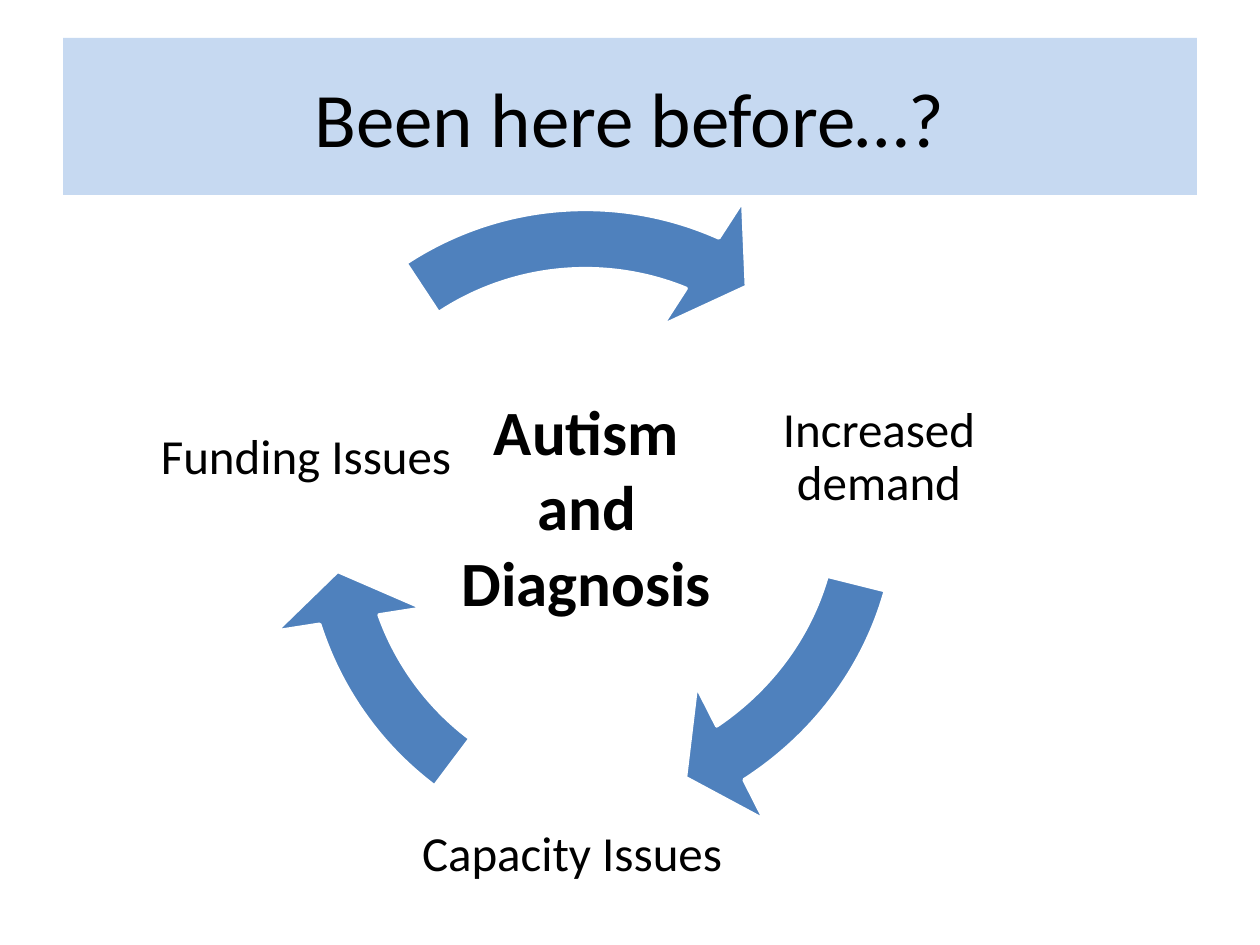
from pptx import Presentation
from pptx.dml.color import RGBColor
from pptx.enum.shapes import MSO_SHAPE
from pptx.enum.text import MSO_ANCHOR, MSO_AUTO_SIZE, PP_ALIGN
from pptx.util import Inches, Pt

BLACK = RGBColor(0x00, 0x00, 0x00)
WHITE = RGBColor(0xFF, 0xFF, 0xFF)
BANNER_BLUE = RGBColor(0xC6, 0xD9, 0xF1)
ARROW_BLUE = RGBColor(0x4F, 0x81, 0xBD)

PX_PER_INCH = 126
LABEL_SIDE = 314
LABEL_INSET = 5
ARROW_THICKNESS, ARROW_TIP, ARROW_HEAD = 0.08, 5.77, 0.1

STEPS = [
    ("Increased demand", (722, 301), (154, 131, 788, 751), (32.09, 8.41)),
    ("Capacity Issues", (415, 699), (260, 155, 741, 741), (96.89, 76.17)),
    ("Funding Issues", (149, 302), (215, 165, 741, 741), (175.96, 141.96)),
]


def px(length):
    return int(length * Inches(1) / PX_PER_INCH)


def assign(target, values):
    for attribute, value in values.items():
        setattr(target, attribute, value)


class CycleSlide:
    font = "Calibri"

    def __init__(self, presentation):
        self.slide = presentation.slides.add_slide(presentation.slide_layouts[5])
        self.cycle = self.slide.shapes.add_group_shape()

    def set_text(self, frame, text, size, bold=False, spacing=None, **frame_format):
        assign(frame, {"word_wrap": True, **frame_format})
        paragraph = frame.paragraphs[0]
        assign(paragraph, {"alignment": PP_ALIGN.CENTER, "line_spacing": spacing})
        run = paragraph.add_run()
        run.text = text
        assign(run.font, {"name": self.font, "size": Pt(size), "bold": bold})
        run.font.color.rgb = BLACK

    def title(self, text, left, top, width, height):
        banner = self.slide.shapes.title
        assign(banner, {"left": px(left), "top": px(top),
                        "width": px(width), "height": px(height)})
        banner.fill.solid()
        banner.fill.fore_color.rgb = BANNER_BLUE
        self.set_text(banner.text_frame, text, 44, vertical_anchor=MSO_ANCHOR.MIDDLE)

    def label(self, text, left, top):
        issue_label = self.cycle.shapes.add_textbox(
            px(left), px(top), px(LABEL_SIDE), px(LABEL_SIDE))
        insets = {f"margin_{side}": px(LABEL_INSET)
                  for side in ("left", "top", "right", "bottom")}
        self.set_text(issue_label.text_frame, text, 28, spacing=0.9,
                      vertical_anchor=MSO_ANCHOR.MIDDLE, **insets)

    def arrow(self, bounds, end_angle, start_angle):
        cycle_arrow = self.cycle.shapes.add_shape(
            MSO_SHAPE.CIRCULAR_ARROW, *map(px, bounds))
        values = (ARROW_THICKNESS, ARROW_TIP, end_angle, start_angle, ARROW_HEAD)
        for index, value in enumerate(values):
            cycle_arrow.adjustments[index] = value
        cycle_arrow.shadow.inherit = False
        cycle_arrow.fill.solid()
        cycle_arrow.fill.fore_color.rgb = ARROW_BLUE
        cycle_arrow.line.color.rgb = WHITE
        cycle_arrow.line.width = Pt(2)

    def centre(self, text, left, top, width, height):
        topic = self.slide.shapes.add_textbox(*map(px, (left, top, width, height)))
        self.set_text(topic.text_frame, text, 36, bold=True,
                      auto_size=MSO_AUTO_SIZE.SHAPE_TO_FIT_TEXT)


def main():
    presentation = Presentation()
    assign(presentation, {"slide_width": px(1260), "slide_height": px(945)})
    diagram = CycleSlide(presentation)
    diagram.title("Been here before…?", 63, 38, 1134, 157)
    for issue, corner, bounds, angles in STEPS:
        diagram.label(issue, *corner)
        diagram.arrow(bounds, *angles)
    diagram.centre("Autism and Diagnosis", 432, 386, 309, 242)
    presentation.save("out.pptx")


if __name__ == "__main__":
    main()
